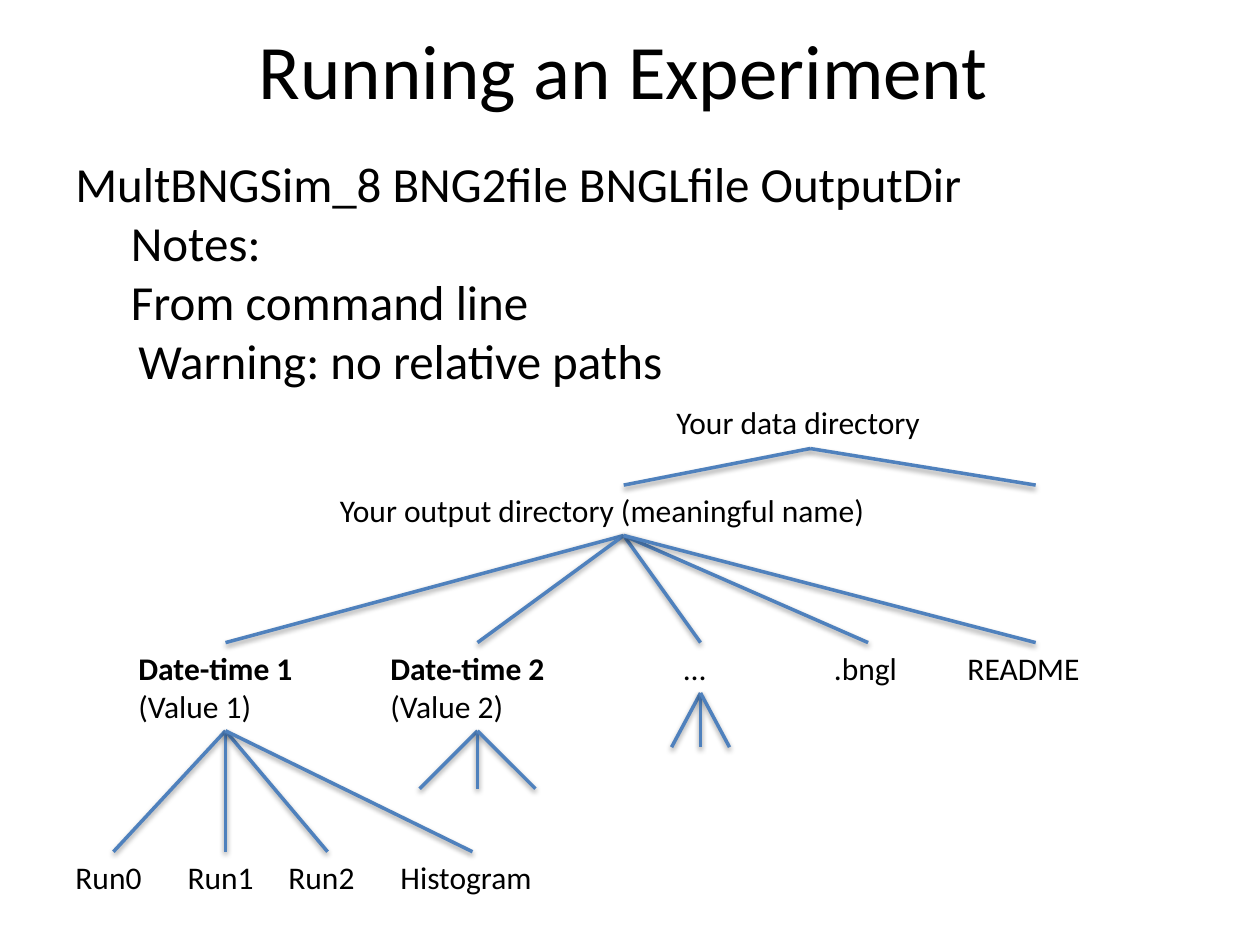
from lxml import etree
from pptx import Presentation, util as u
from pptx.dml import color
from pptx.enum import shapes, text
from pptx.oxml import ns

COLS, ROWS = 100, 75
CELL = u.Inches(0.1)
INK, BLUE = "000000", "4F81BD"


def grid(*cells):
    """Turn grid cells into slide lengths."""
    return [round(c * CELL) for c in cells]


def tint(spot, code):
    """Set a colour from a hex string."""
    spot.rgb = color.RGBColor.from_string(code)


def write(slide, place, lines, size, wrap=False, grow=True):
    """Add a text box from (text, bold, indent) lines."""
    frame = slide.shapes.add_textbox(*grid(*place)).text_frame
    frame.word_wrap = wrap
    frame.auto_size = text.MSO_AUTO_SIZE.SHAPE_TO_FIT_TEXT if grow else text.MSO_AUTO_SIZE.NONE
    for i, (words, bold, inset) in enumerate(lines):
        para = frame.paragraphs[0] if i == 0 else frame.add_paragraph()
        if inset:
            para._p.get_or_add_pPr().set("marL", str(grid(inset)[0]))
        run = para.add_run()
        run.text = words
        font = run.font
        font.name, font.size, font.bold = "Calibri", u.Pt(size), bold
        tint(font.color, INK)
    return frame


def shade(line):
    """Give a line a soft shadow below it."""
    box = etree.SubElement(line._element.spPr, ns.qn("a:effectLst"))
    cast = etree.SubElement(box, ns.qn("a:outerShdw"), blurRad="40000",
                            dist="20000", dir="5400000", rotWithShape="0")
    tone = etree.SubElement(cast, ns.qn("a:srgbClr"), val=INK)
    etree.SubElement(tone, ns.qn("a:alpha"), val="38000")


def fan(slide, root, ends, floor):
    """Draw lines from a root down to ends on one level."""
    for end in ends:
        line = slide.shapes.add_connector(
            shapes.MSO_CONNECTOR.STRAIGHT, *grid(*root, end, floor))
        line.line.width = u.Pt(2)
        tint(line.line.color, BLUE)
        shade(line)


def label(slide, left, top, width, words, note=None):
    """Add a tree label, bold when a note stands under it."""
    lines = [(words, bool(note), 0)]
    if note:
        lines.append((note, False, 0))
    write(slide, (left, top, width, 7.1 if note else 4), lines, 18)


def head(slide):
    """Add the title and the command with its notes."""
    title = write(slide, (4.5, -0.8, 90, 12.5),
                  [("Running an Experiment", False, 0)], 44, True, False)
    title.vertical_anchor = text.MSO_ANCHOR.MIDDLE
    title.paragraphs[0].alignment = text.PP_ALIGN.CENTER
    write(slide, (5, 11.7, 90, 19.9), [
        ("MultBNGSim_8 BNG2file BNGLfile OutputDir", False, 0),
        ("Notes:", False, 4.4),
        ("From command line", False, 4.4),
        ("Warning: no relative paths", False, 5),
    ], 28, True)


def tree(slide):
    """Add the directory tree level by level."""
    out, first, second, more, last = 49.5, 17.9, 37.9, 55.6, 82.2
    kids, runs = 51, 67.6
    fan(slide, (64.3, 35.6), (out, last), 38.5)
    fan(slide, (out, 42.5), (first, second, more, 68.9, last), kids)
    fan(slide, (first, 58), (9, first, 26, 37.5), runs)
    for mid, top, reach, drop in ((second, 58, 4.6, 4.6), (more, 55, 2.3, 4.3)):
        fan(slide, (mid, top), (mid - reach, mid, mid + reach), top + drop)
    label(slide, 52.7, 31.5, 23.1, "Your data directory")
    label(slide, 26, 38.5, 47, "Your output directory (meaningful name)")
    for i in (1, 2):
        label(slide, 20 * i - 10, kids, 15.8, f"Date-time {i}", f"(Value {i})")
    for left, width, words in ((53.3, 4.5, "…"), (65.2, 7.5, ".bngl"), (75.8, 12.8, "README")):
        label(slide, left, kids, width, words)
    for i, left in enumerate((5, 13.9, 21.9)):
        label(slide, left, runs, 8.1, f"Run{i}")
    label(slide, 30.8, runs, 13.5, "Histogram")


def main():
    """Build and save the slide."""
    deck = Presentation()
    deck.slide_width, deck.slide_height = grid(COLS, ROWS)
    slide = deck.slides.add_slide(deck.slide_layouts[6])
    head(slide)
    tree(slide)
    deck.save("out.pptx")


if __name__ == "__main__":
    main()
